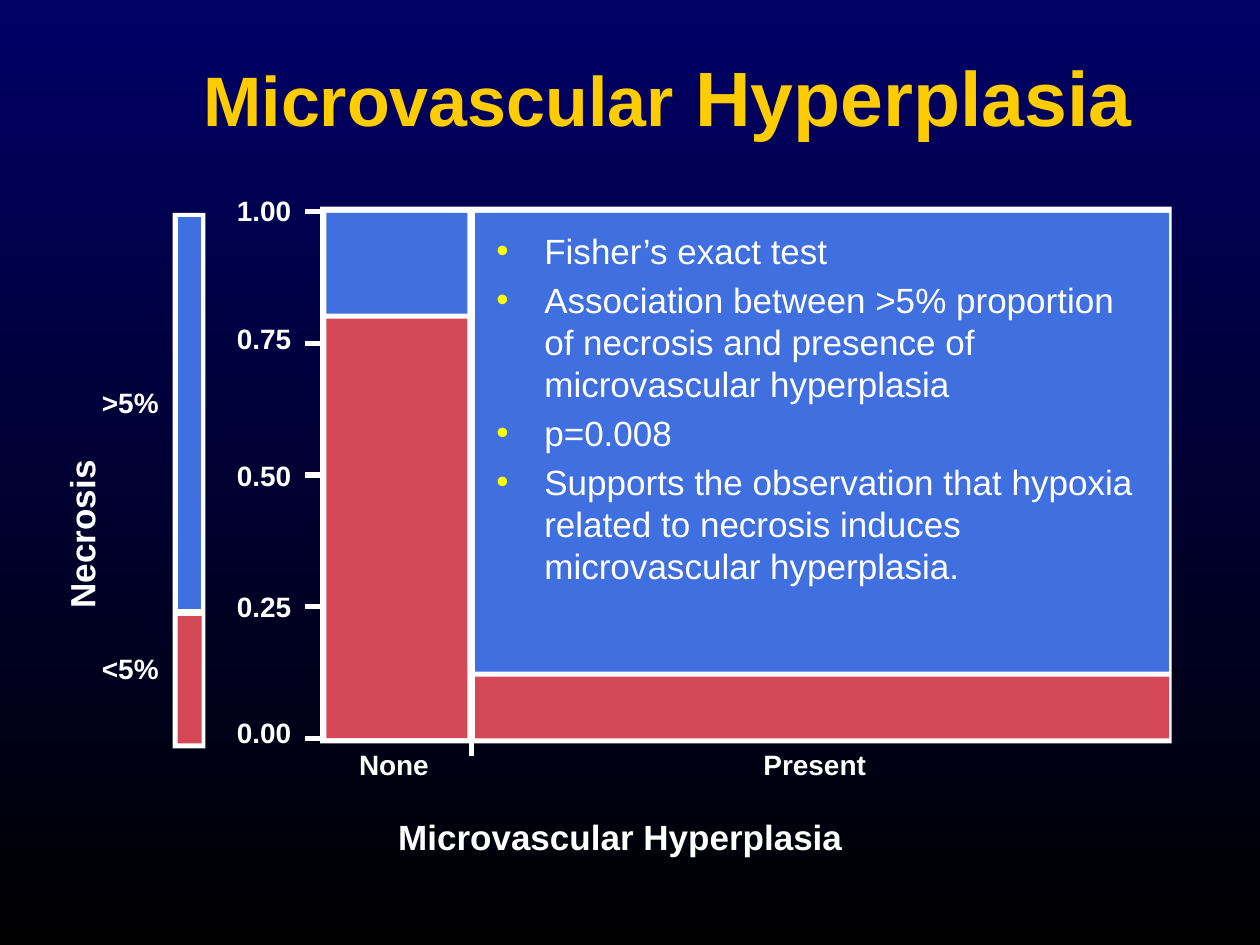
from lxml import etree
from pptx import Presentation
from pptx.dml.color import RGBColor
from pptx.enum.shapes import MSO_CONNECTOR, MSO_SHAPE
from pptx.enum.text import MSO_ANCHOR, MSO_AUTO_SIZE, PP_ALIGN
from pptx.oxml.ns import qn
from pptx.util import Inches, Pt

RECTANGLE = MSO_SHAPE.RECTANGLE
STRAIGHT = MSO_CONNECTOR.STRAIGHT
MIDDLE = MSO_ANCHOR.MIDDLE
CENTER = PP_ALIGN.CENTER
NO_AUTOFIT = MSO_AUTO_SIZE.NONE

COLUMNS, ROWS = 1000, 750
CELL = Inches(10) // COLUMNS
FONT = "Arial"
WHITE, GOLD, YELLOW = "FFFFFF", "FFCC00", "FFFF00"
BLUE, RED = "406FDF", "D54857"
NAVY, BLACK = "000066", "000000"

AXIS_TOP, AXIS_BOTTOM = 168, 586
AXIS_LABELS = [("0.00", 568), ("0.25", 468), ("0.50", 364), ("0.75", 255), ("1.00", 154)]
LABELS = [
    (">5%", 81, 306, 77),
    ("<5%", 81, 517, 77),
    ("None", 285, 593, 113),
    ("Present", 606, 593, 166),
]
FINDINGS = [
    "Fisher’s exact test",
    "Association between >5% proportion of necrosis and presence of microvascular hyperplasia",
    "p=0.008",
    "Supports the observation that hypoxia related to necrosis induces microvascular hyperplasia.",
]


def color(value):
    return RGBColor.from_string(value)


def grid(*cells):
    return [round(cell * CELL) for cell in cells]


def place(box, *cells):
    box.left, box.top, box.width, box.height = grid(*cells)


def style(font, size, fill, bold):
    font.name = FONT
    font.size = Pt(size)
    font.bold = bold
    font.color.rgb = color(fill)


def paint_background(page):
    fill = page.background.fill
    fill.gradient()
    fill.gradient_angle = 270
    for stop, value in zip(fill.gradient_stops, (NAVY, BLACK)):
        stop.color.rgb = color(value)


def write_title(page):
    title = page.shapes.title
    place(title, 80, 25, 900, 102)
    frame = title.text_frame
    frame.auto_size = NO_AUTOFIT
    frame.vertical_anchor = MIDDLE
    para = frame.paragraphs[0]
    para.alignment = CENTER
    for text, size in (("Microvascular", 40), (" Hyperplasia", 44)):
        span = para.add_run()
        span.text = text
        style(span.font, size, GOLD, True)


def add_label(page, text, left, top, width, height=27, size=16, rotation=0):
    box = page.shapes.add_textbox(*grid(left, top, width, height))
    box.rotation = rotation
    frame = box.text_frame
    frame.word_wrap = True
    frame.margin_left = frame.margin_right = 0
    frame.margin_top = frame.margin_bottom = 0
    para = frame.paragraphs[0]
    para.text = text
    style(para.font, size, WHITE, True)


def add_tile(page, fill, *cells, outlined=False):
    tile = page.shapes.add_shape(RECTANGLE, *grid(*cells))
    tile.shadow.inherit = False
    tile.fill.solid()
    tile.fill.fore_color.rgb = color(fill)
    if outlined:
        tile.line.color.rgb = color(WHITE)
        tile.line.width = Pt(0.75)
    else:
        tile.line.fill.background()


def add_tick(page, *cells):
    tick = page.shapes.add_connector(STRAIGHT, *grid(*cells))
    tick.line.color.rgb = color(WHITE)
    tick.line.width = Pt(3)
    etree.SubElement(tick._element.spPr, qn("a:effectLst"))


def add_bullet(para):
    properties = para._p.get_or_add_pPr()
    indent = Inches(0.38)
    properties.set("marL", str(indent))
    properties.set("indent", str(-indent))
    bullet_color = etree.SubElement(properties, qn("a:buClr"))
    etree.SubElement(bullet_color, qn("a:srgbClr"), val=YELLOW)
    etree.SubElement(properties, qn("a:buChar"), char="•")


def write_findings(page):
    body = page.placeholders[1]
    place(body, 384, 177, 538, 352)
    frame = body.text_frame
    frame.auto_size = NO_AUTOFIT
    frame.text = "\n".join(FINDINGS)
    for para in frame.paragraphs:
        add_bullet(para)
        para.space_before = Pt(4)
        style(para.font, 20, WHITE, False)
    page.shapes._spTree.append(body._element)


def draw_legend(page):
    add_tile(page, WHITE, 137, 169, 26, 425)
    add_tile(page, RED, 141, 489, 19, 101)
    add_tile(page, BLUE, 141, 172, 19, 312, outlined=True)


def draw_mosaic(page):
    add_tile(page, WHITE, 254, 164, 676, 426)
    top, bottom, gap = 169, 586, 4
    for left, width, split in ((259, 112, 249), (377, 551, 533)):
        add_tile(page, BLUE, left, top, width, split - top)
        add_tile(page, RED, left, split + gap, width, bottom - split - gap)


def draw_axes(page):
    step = (AXIS_BOTTOM - AXIS_TOP) / (len(AXIS_LABELS) - 1)
    for index, (text, label_top) in enumerate(AXIS_LABELS):
        row = AXIS_BOTTOM - index * step
        add_label(page, text, 188, label_top, 74)
        add_tick(page, 257, row, 242, row)
    add_tick(page, 374, 586, 374, 600)


def main():
    deck = Presentation()
    deck.slide_width, deck.slide_height = grid(COLUMNS, ROWS)
    page = deck.slides.add_slide(deck.slide_layouts[1])
    paint_background(page)
    write_title(page)
    draw_legend(page)
    draw_mosaic(page)
    draw_axes(page)
    for label in LABELS:
        add_label(page, *label)
    add_label(page, "Necrosis", -59, 342, 248, 34, size=20, rotation=270)
    add_label(page, "Microvascular Hyperplasia", 316, 647, 449, 34, size=20)
    write_findings(page)
    deck.save("out.pptx")


if __name__ == "__main__":
    main()
